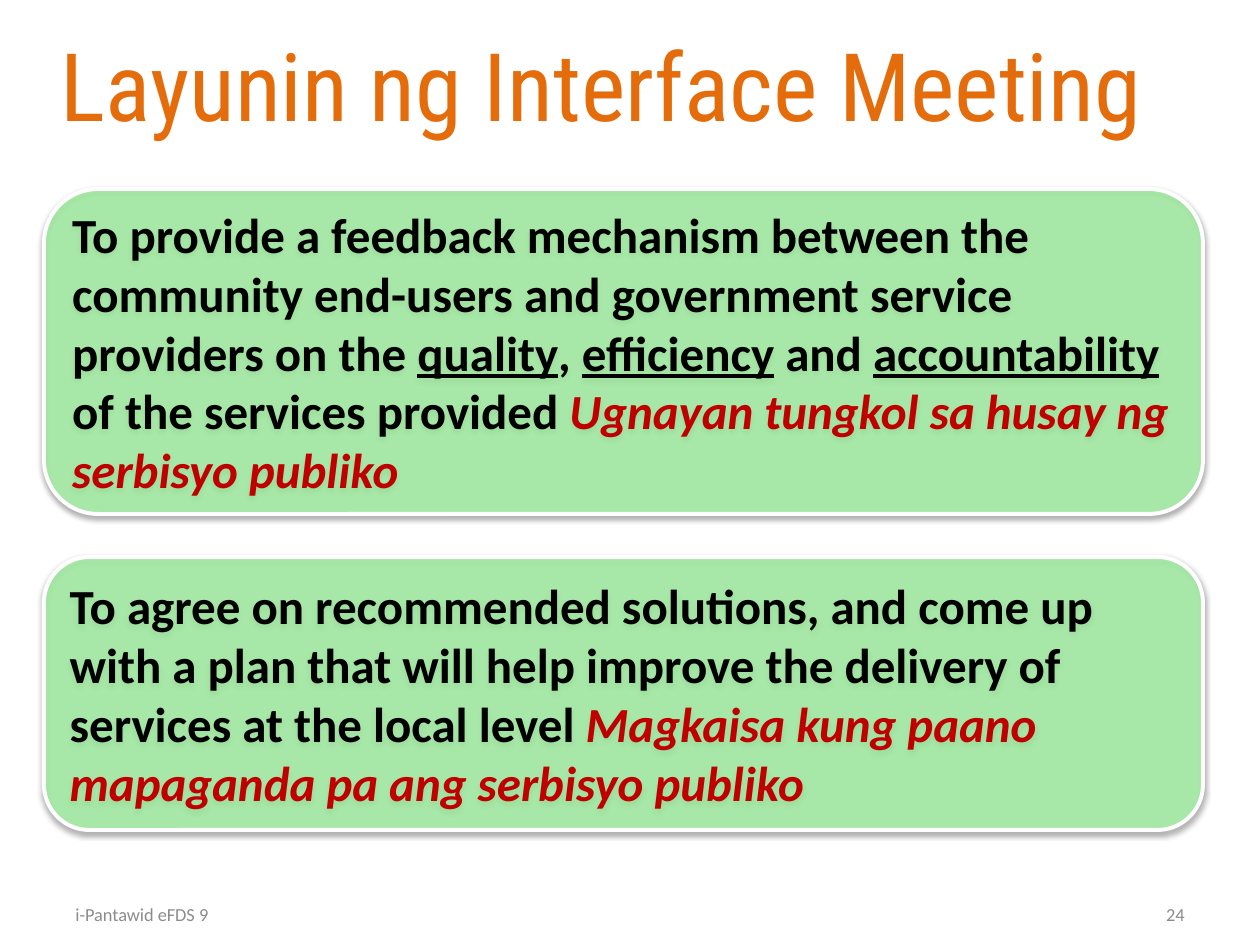
from lxml.etree import SubElement
from pptx import Presentation
from pptx.dml.color import RGBColor
from pptx.enum.shapes import MSO_SHAPE
from pptx.enum.text import MSO_ANCHOR, MSO_AUTO_SIZE, PP_ALIGN
from pptx.oxml import parse_xml
from pptx.oxml.ns import nsdecls, qn
from pptx.util import Emu, Pt

PX = 914400 / 126

ORANGE = RGBColor(0xE4, 0x6C, 0x0A)
GREEN = RGBColor(0x99, 0xFF, 0x99)
WHITE = RGBColor(0xFF, 0xFF, 0xFF)
BLACK = RGBColor(0x00, 0x00, 0x00)
RED = RGBColor(0xC0, 0x00, 0x00)
GRAY = RGBColor(0x8C, 0x8C, 0x8C)

SHADOW = f"""<a:effectLst {nsdecls("a")}>
  <a:outerShdw blurRad="{Pt(3.1)}" dist="{Pt(1.6)}" dir="5400000" rotWithShape="0">
    <a:srgbClr val="000000"><a:alpha val="38000"/></a:srgbClr>
  </a:outerShdw>
</a:effectLst>"""


def px(*lengths):
    return [Emu(round(length * PX)) for length in lengths]


deck = Presentation()
deck.slide_width, deck.slide_height = px(1260, 945)
page = deck.slides.add_slide(deck.slide_layouts.get_by_name("Title Only"))

title = page.shapes.title
title.left, title.top, title.width, title.height = px(48, 21, 1162, 127)
frame = title.text_frame
frame.text = "Layunin ng Interface Meeting"
frame.word_wrap = False
frame.auto_size = MSO_AUTO_SIZE.NONE
frame.vertical_anchor = MSO_ANCHOR.TOP
para = frame.paragraphs[0]
para.alignment = PP_ALIGN.LEFT
para.font.name = "Roboto Condensed"
para.font.size = Pt(54)
para.font.color.rgb = ORANGE

# Each goal: top, height, then its spans as (text, style)
goals = [
    (189, 325, [
        ("To provide a feedback mechanism between the community end-users "
         "and government service providers on the ", "plain"),
        ("quality", "underlined"),
        (", ", "plain"),
        ("efficiency", "underlined"),
        (" and ", "plain"),
        ("accountability", "underlined"),
        (" of the services provided ", "plain"),
        ("Ugnayan tungkol sa husay ng serbisyo publiko", "translation"),
    ]),
    (557, 273, [
        ("To agree on recommended solutions, and come up with a plan that will "
         "help improve the delivery of services at the local level ", "plain"),
        ("Magkaisa kung paano mapaganda pa ang serbisyo publiko", "translation"),
    ]),
]
for top, height, spans in goals:
    box = page.shapes.add_shape(MSO_SHAPE.ROUNDED_RECTANGLE, *px(44, top, 1159, height))
    box.fill.solid()
    box.fill.fore_color.rgb = GREEN
    color = box.fill._xPr.find(qn("a:solidFill"))[0]
    SubElement(color, qn("a:alpha"), val="63000")
    box.line.color.rgb = WHITE
    box.line.width = Pt(2.25)
    box._element.spPr.append(parse_xml(SHADOW))

    frame = box.text_frame
    frame.word_wrap = True
    frame.vertical_anchor = MSO_ANCHOR.MIDDLE
    para = frame.paragraphs[0]
    para.alignment = PP_ALIGN.LEFT
    para.font.name = "Calibri"
    para.font.size = Pt(28)
    para.font.bold = True
    for text, style in spans:
        span = para.add_run()
        span.text = text
        span.font.color.rgb = RED if style == "translation" else BLACK
        if style == "underlined":
            span.font.underline = True
        if style == "translation":
            span.font.italic = True

footers = [
    (903, "24", PP_ALIGN.RIGHT),
    (63, "i-Pantawid eFDS 9", PP_ALIGN.LEFT),
]
for left, text, alignment in footers:
    box = page.shapes.add_textbox(*px(left, 903, 294, 23))
    frame = box.text_frame
    frame.text = text
    frame.word_wrap = True
    frame.vertical_anchor = MSO_ANCHOR.MIDDLE
    para = frame.paragraphs[0]
    para.alignment = alignment
    para.font.name = "Calibri"
    para.font.size = Pt(10.5)
    para.font.color.rgb = GRAY

deck.save("out.pptx")
